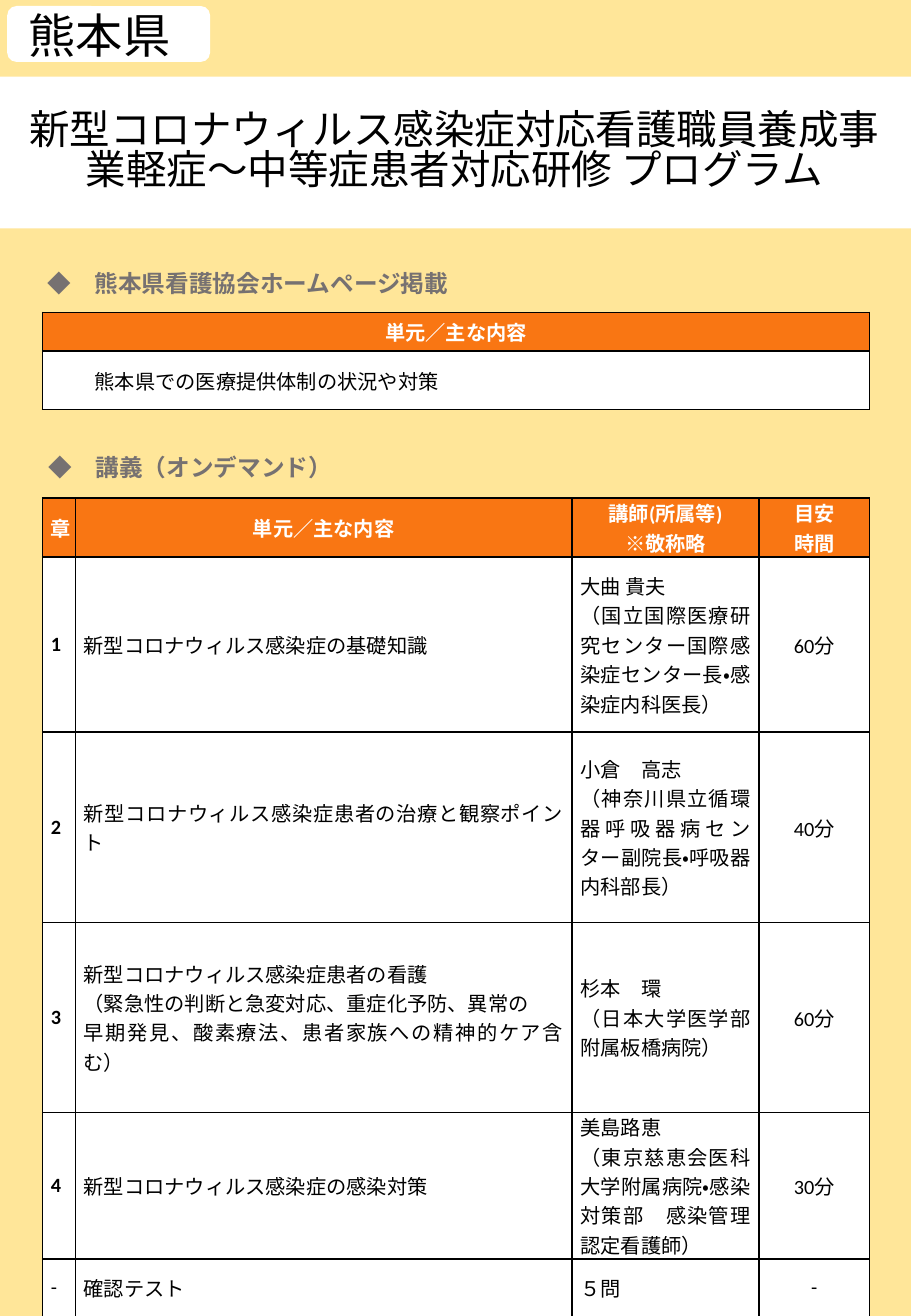
from dataclasses import dataclass

from lxml import etree
from pptx import Presentation
from pptx.dml.color import RGBColor
from pptx.enum import lang, shapes, text
from pptx.oxml import ns
from pptx.util import Inches, Pt

COLORS = {"cream": "FFE699", "white": "FFFFFF", "black": "000000",
          "orange": "F97613", "gray": "767171"}
CENTER, JUSTIFY, LEFT = (text.PP_ALIGN.CENTER, text.PP_ALIGN.JUSTIFY,
                         text.PP_ALIGN.LEFT)
MIDDLE, TOP = text.MSO_ANCHOR.MIDDLE, text.MSO_ANCHOR.TOP
SANS = "Noto Sans CJK JP"


@dataclass
class Style:
    size: int
    color: str
    font: str = "Calibri"
    bold: bool = False
    align: text.PP_ALIGN = LEFT


@dataclass
class Panel:
    kind: shapes.MSO_SHAPE
    at: tuple[float, float, float, float]
    color: str


@dataclass
class Label:
    words: str
    at: tuple[float, float, float, float]
    style: Style
    anchor: text.MSO_ANCHOR = MIDDLE


@dataclass
class Program:
    at: tuple[float, float]
    widths: list[float]
    heights: list[float]
    rows: list[list[str]]
    aligns: list[text.PP_ALIGN]
    bold_chapters: bool = False
    indent: float = 0


BACKDROP = Panel(shapes.MSO_SHAPE.RECTANGLE, (-0.01, 0, 7.52, 10.83), "cream")
PREFECTURE_TAG = Panel(shapes.MSO_SHAPE.ROUNDED_RECTANGLE, (0.06, 0.05, 1.67, 0.46), "white")

TITLE = Label("新型コロナウィルス感染症対応看護職員養成事業軽症～中等症患者対応研修 プログラム",
              (-0.02, 0.63, 7.52, 1.25), Style(24, "black", SANS, align=CENTER))
LABELS = [
    Label("◆　熊本県看護協会ホームページ掲載", (0.29, 2.16, 5.51, 0.34),
          Style(14, "gray", SANS, True)),
    Label("◆　講義（オンデマンド）", (0.3, 3.67, 3.16, 0.34),
          Style(14, "gray", "TeX Gyre Schola", True)),
    Label("熊本県", (0.06, 0, 1.52, 0.57), Style(28, "black", align=CENTER), TOP),
]

PROGRAMS = [
    Program((0.35, 2.57), [6.81], [0.32, 0.48],
            [["単元／主な内容"], ["熊本県での医療提供体制の状況や対策"]], [LEFT], indent=0.36),
    Program((0.35, 4.1), [0.27, 4.09, 1.54, 0.91], [0.41, 1.44, 1.57, 1.56, 1.07, 0.47], [
        ["章", "単元／主な内容", "講師(所属等)\n※敬称略", "目安\n時間"],
        ["1", "新型コロナウィルス感染症の基礎知識",
         "大曲 貴夫\n（国立国際医療研究センター国際感染症センター長・感染症内科医長）", "60分"],
        ["2", "新型コロナウィルス感染症患者の治療と観察ポイント",
         "小倉　高志\n（神奈川県立循環器呼吸器病センター副院長・呼吸器内科部長）", "40分"],
        ["3", "新型コロナウィルス感染症患者の看護\n（緊急性の判断と急変対応、重症化予防、異常の\n"
              "早期発見、酸素療法、患者家族への精神的ケア含む）",
         "杉本　環\n（日本大学医学部附属板橋病院）", "60分"],
        ["4", "新型コロナウィルス感染症の感染対策",
         "美島路恵\n（東京慈恵会医科大学附属病院・感染対策部　感染管理認定看護師）", "30分"],
        ["-", "確認テスト", "５問", "-"],
    ], [JUSTIFY, JUSTIFY, JUSTIFY, CENTER], bold_chapters=True),
]


def rgb(color: str) -> RGBColor:
    return RGBColor.from_string(COLORS[color])


def write(frame, words: str, style: Style) -> None:
    for index, line in enumerate(words.split("\n")):
        paragraph = frame.paragraphs[0] if index == 0 else frame.add_paragraph()
        paragraph.alignment = style.align
        run = paragraph.add_run()
        run.text = line
        run.font.name = style.font
        run.font.size = Pt(style.size)
        run.font.bold = style.bold
        run.font.color.rgb = rgb(style.color)
        run.font.language_id = lang.MSO_LANGUAGE_ID.JAPANESE


def draw_panel(slide, panel: Panel) -> None:
    shape = slide.shapes.add_shape(panel.kind, *map(Inches, panel.at))
    shape.shadow.inherit = False
    shape.fill.solid()
    shape.fill.fore_color.rgb = rgb(panel.color)
    shape.line.fill.background()


def draw_title(slide, label: Label) -> None:
    title = slide.shapes.title
    slide.shapes._spTree.append(title._element)
    title.left, title.top, title.width, title.height = map(Inches, label.at)
    title.fill.solid()
    title.fill.fore_color.rgb = rgb("white")
    frame = title.text_frame
    frame.word_wrap = True
    frame.auto_size = text.MSO_AUTO_SIZE.NONE
    frame.vertical_anchor = label.anchor
    write(frame, label.words, label.style)
    frame.paragraphs[0].line_spacing = 0.82


def draw_label(slide, label: Label) -> None:
    frame = slide.shapes.add_textbox(*map(Inches, label.at)).text_frame
    frame.word_wrap = True
    frame.vertical_anchor = label.anchor
    write(frame, label.words, label.style)


def add_borders(cell) -> None:
    properties = cell._tc.get_or_add_tcPr()
    for side in ("a:lnL", "a:lnR", "a:lnT", "a:lnB"):
        border = etree.SubElement(properties, ns.qn(side), w=str(Pt(1)))
        fill = etree.SubElement(border, ns.qn("a:solidFill"))
        etree.SubElement(fill, ns.qn("a:srgbClr"), val=COLORS["black"])


def draw_program(slide, program: Program) -> None:
    table = slide.shapes.add_table(
        len(program.heights), len(program.widths), *map(Inches, program.at),
        Inches(sum(program.widths)), Inches(sum(program.heights))).table
    table.horz_banding = False
    for column, width in zip(table.columns, program.widths):
        column.width = Inches(width)
    for row, height in zip(table.rows, program.heights):
        row.height = Inches(height)
    for r, row in enumerate(program.rows):
        for c, words in enumerate(row):
            header = r == 0
            cell = table.cell(r, c)
            add_borders(cell)
            cell.fill.solid()
            cell.fill.fore_color.rgb = rgb("orange" if header else "white")
            cell.vertical_anchor = MIDDLE
            cell.margin_left = Inches(0.07 if header else 0.07 + program.indent)
            cell.margin_right = Inches(0.07)
            cell.margin_top = cell.margin_bottom = 0
            chapter = program.bold_chapters and c == 0 and words != "-"
            write(cell.text_frame, words, Style(
                12, "white" if header else "black", bold=header or chapter,
                align=CENTER if header else program.aligns[c]))


def main() -> None:
    deck = Presentation()
    deck.slide_width, deck.slide_height = Inches(7.5), Inches(10.83)
    slide = deck.slides.add_slide(deck.slide_layouts[5])
    draw_panel(slide, BACKDROP)
    draw_title(slide, TITLE)
    for program in PROGRAMS:
        draw_program(slide, program)
    draw_panel(slide, PREFECTURE_TAG)
    for label in LABELS:
        draw_label(slide, label)
    deck.save("out.pptx")


if __name__ == "__main__":
    main()
